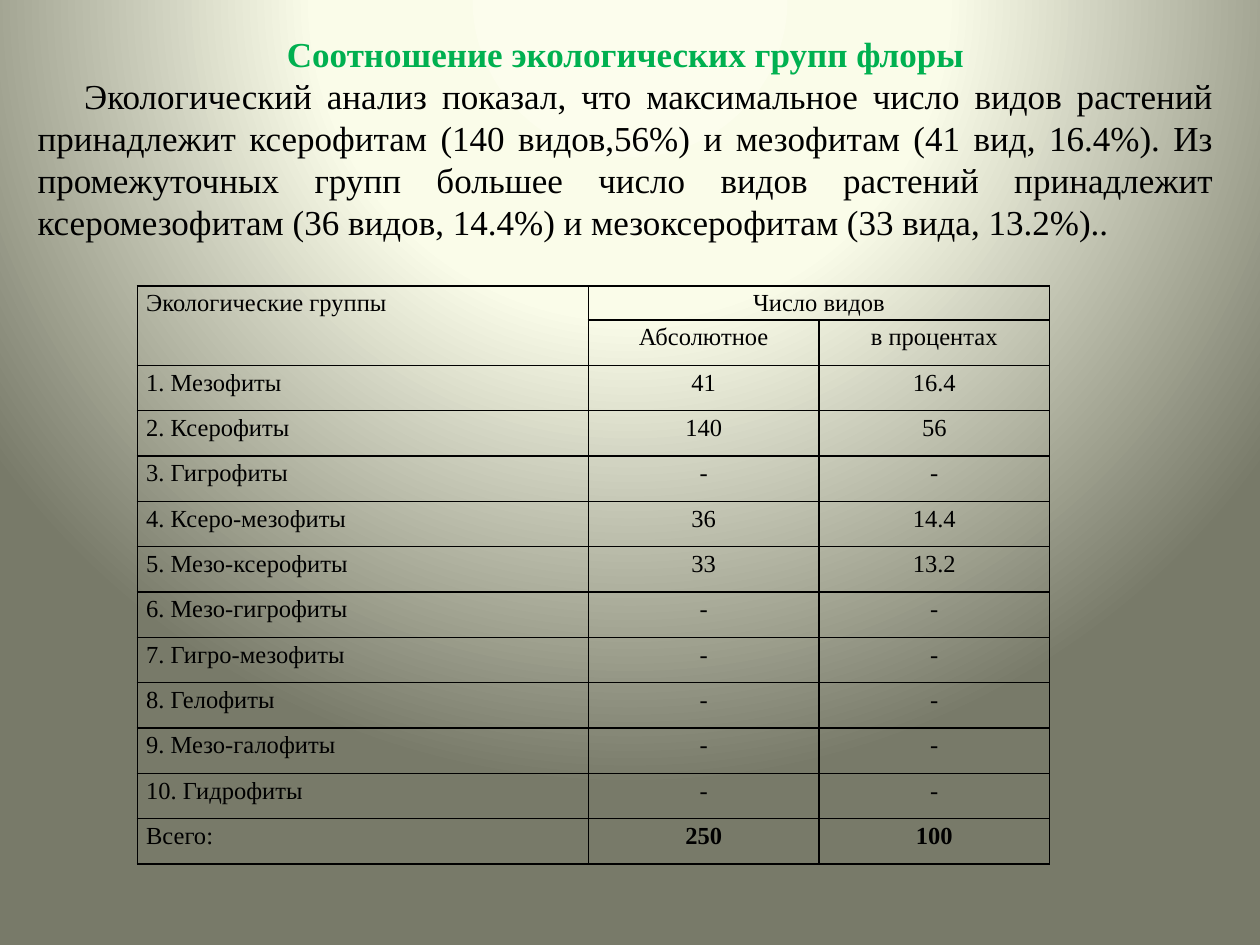
from dataclasses import dataclass

from pptx import Presentation
from pptx.dml.color import RGBColor
from pptx.enum.text import MSO_AUTO_SIZE, PP_ALIGN as Align
from pptx.oxml import parse_xml
from pptx.oxml.ns import nsdecls
from pptx.util import Inches, Pt

# Content
TITLE = "Соотношение экологических групп флоры"
BODY = (
    "Экологический анализ показал, что максимальное число видов растений "
    "принадлежит ксерофитам (140 видов,56%) и мезофитам (41 вид, 16.4%). "
    "Из промежуточных групп большее число видов растений принадлежит "
    "ксеромезофитам (36 видов, 14.4%) и мезоксерофитам (33 вида, 13.2%).."
)
ROWS = [
    ("Экологические группы", "Число видов", ""),
    ("", "Абсолютное", "в процентах"),
    ("1. Мезофиты", "41", "16.4"),
    ("2. Ксерофиты", "140", "56"),
    ("3. Гигрофиты", "-", "-"),
    ("4. Ксеро-мезофиты", "36", "14.4"),
    ("5. Мезо-ксерофиты", "33", "13.2"),
    ("6. Мезо-гигрофиты", "-", "-"),
    ("7. Гигро-мезофиты", "-", "-"),
    ("8. Гелофиты", "-", "-"),
    ("9. Мезо-галофиты", "-", "-"),
    ("10. Гидрофиты", "-", "-"),
    ("Всего:", "250", "100"),
]
COL_WIDTHS = (3.58, 1.83, 1.83)
ROW_HEIGHTS = [0.27] + [0.36] * (len(ROWS) - 1)


@dataclass(frozen=True)
class Theme:
    font: str = "Times New Roman"
    text: str = "000000"
    title: str = "00B050"
    gradient: tuple = ((0, "FCFDED"), (40, "FAFCE9"), (100, "787A69"))
    text_size: int = 20
    table_size: int = 14
    border: int = 1


THEME = Theme()


def set_font(p, size, color=THEME.text, bold=False):
    f = p.font
    f.name, f.size, f.bold = THEME.font, Pt(size), bold
    f.color.rgb = RGBColor.from_string(color)


def set_background(s):
    stops = "".join(
        f'<a:gs pos="{pos * 1000}"><a:srgbClr val="{color}"/></a:gs>'
        for pos, color in THEME.gradient
    )
    s.element.cSld.insert(0, parse_xml(
        f'<p:bg {nsdecls("p", "a")}><p:bgPr><a:gradFill rotWithShape="1">'
        f'<a:gsLst>{stops}</a:gsLst><a:path path="circle">'
        '<a:fillToRect l="50000" t="-80000" r="50000" b="180000"/></a:path>'
        '</a:gradFill><a:effectLst/></p:bgPr></p:bg>'
    ))


def set_borders(cell):
    tc_pr = cell._tc.get_or_add_tcPr()
    for i, side in enumerate(("lnL", "lnR", "lnT", "lnB")):
        tc_pr.insert(i, parse_xml(
            f'<a:{side} {nsdecls("a")} w="{Pt(THEME.border)}"><a:solidFill>'
            f'<a:srgbClr val="{THEME.text}"/></a:solidFill></a:{side}>'
        ))


def add_intro(s):
    box = s.shapes.add_textbox(Inches(0.2), Inches(0.21), Inches(9.53), Inches(1.78))
    tf = box.text_frame
    tf.word_wrap = True
    tf.auto_size = MSO_AUTO_SIZE.SHAPE_TO_FIT_TEXT
    title, body = tf.paragraphs[0], tf.add_paragraph()
    title.text, title.alignment = TITLE, Align.CENTER
    set_font(title, THEME.text_size, THEME.title, bold=True)
    body.text, body.alignment = BODY, Align.JUSTIFY
    body._p.get_or_add_pPr().set("indent", str(Inches(0.37)))
    set_font(body, THEME.text_size)


def add_groups_table(s):
    table = s.shapes.add_table(
        len(ROWS), len(COL_WIDTHS), Inches(1.09), Inches(2.27),
        Inches(sum(COL_WIDTHS)), Inches(sum(ROW_HEIGHTS)),
    ).table
    table.first_row = table.horz_banding = False
    for col, width in zip(table.columns, COL_WIDTHS):
        col.width = Inches(width)
    for row, height in zip(table.rows, ROW_HEIGHTS):
        row.height = Inches(height)

    for r, values in enumerate(ROWS):
        for c, value in enumerate(values):
            cell = table.cell(r, c)
            cell.margin_left = cell.margin_right = Inches(0.07)
            cell.margin_top = cell.margin_bottom = 0
            cell.fill.background()
            set_borders(cell)
            p = cell.text_frame.paragraphs[0]
            p.text = value
            p.alignment = Align.CENTER if c else Align.JUSTIFY
            p.line_spacing = 1.15
            set_font(p, THEME.table_size, bold=c > 0 and r == len(ROWS) - 1)

    # Two-level header
    table.cell(0, 0).merge(table.cell(1, 0))
    table.cell(0, 1).merge(table.cell(0, 2))


def main():
    prs = Presentation()
    prs.slide_width, prs.slide_height = Inches(10), Inches(7.5)
    s = prs.slides.add_slide(prs.slide_layouts[6])
    set_background(s)
    add_intro(s)
    add_groups_table(s)
    prs.save("out.pptx")


if __name__ == "__main__":
    main()
